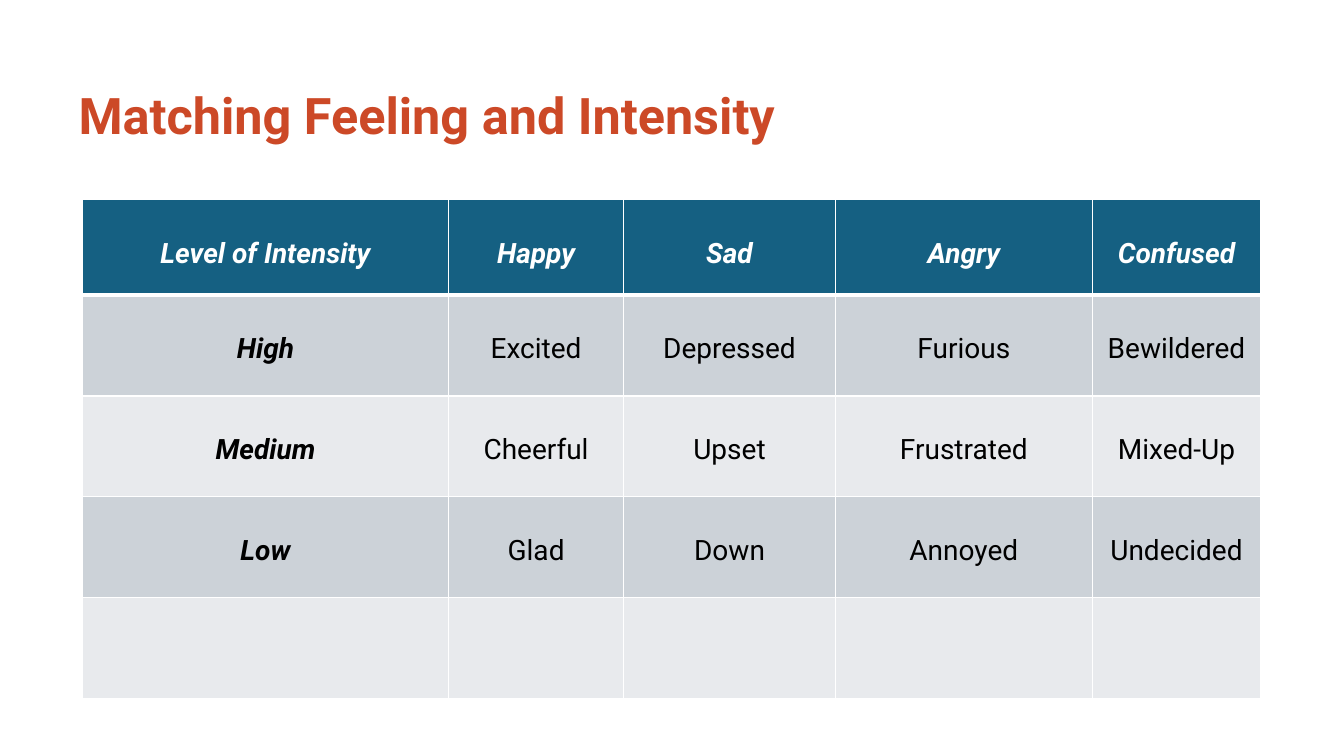
import lxml.etree
import pptx
import pptx.dml.color
import pptx.enum.text
import pptx.oxml.ns
import pptx.util

Cm = pptx.util.Cm
WHITE = "FFFFFF"
BLACK = "000000"
ORANGE = "CC4927"
TEAL = "156082"
BAND_FILLS = ["CCD2D8", "E8EAED"]

COLUMN_WIDTHS = [9.22, 4.42, 5.33, 6.48, 4.24]
ROW_HEIGHTS = [2.41, 2.54, 2.54, 2.54, 2.54]
FEELINGS = [
    ["Level of Intensity", "Happy", "Sad", "Angry", "Confused"],
    ["High", "Excited", "Depressed", "Furious", "Bewildered"],
    ["Medium", "Cheerful", "Upset", "Frustrated", "Mixed-Up"],
    ["Low", "Glad", "Down", "Annoyed", "Undecided"],
    [""] * 5,
]


def rgb(color):
    """Return the colour for a hex string."""
    return pptx.dml.color.RGBColor.from_string(color)


def style_paragraph(paragraph, size, color, bold=False, italic=False):
    """Format every run of a paragraph."""
    for run in paragraph.runs:
        run.font.name = "Roboto"
        run.font.size = pptx.util.Pt(size)
        run.font.bold = bold
        run.font.italic = italic
        run.font.color.rgb = rgb(color)


def add_title(slide, text):
    """Add the slide heading."""
    shape = slide.shapes.add_textbox(Cm(1.73), Cm(1.98), Cm(27.76), Cm(1.8))
    frame = shape.text_frame
    frame.word_wrap = True
    frame.vertical_anchor = pptx.enum.text.MSO_ANCHOR.MIDDLE
    frame.text = text
    style_paragraph(frame.paragraphs[0], 36, ORANGE, bold=True)


def set_borders(cell, widths):
    """Draw white cell borders with a width in points for each side."""
    qn = pptx.oxml.ns.qn
    properties = cell._tc.get_or_add_tcPr()
    for side, width in widths.items():
        line = lxml.etree.SubElement(
            properties, qn(f"a:ln{side}"), w=str(pptx.util.Pt(width)))
        fill = lxml.etree.SubElement(line, qn("a:solidFill"))
        lxml.etree.SubElement(fill, qn("a:srgbClr"), val=WHITE)


def fill_cell(cell, text, row, column):
    """Write and format one cell by its place in the table."""
    header = row == 0
    emphasis = header or column == 0
    set_borders(cell, {"L": 1, "R": 1, "T": 3 if row == 1 else 1,
                       "B": 3 if header else 1})
    cell.fill.solid()
    cell.fill.fore_color.rgb = rgb(TEAL if header else BAND_FILLS[(row - 1) % 2])
    cell.margin_top = Cm(0.95)
    cell.text_frame.text = text
    paragraph = cell.text_frame.paragraphs[0]
    paragraph.alignment = pptx.enum.text.PP_ALIGN.CENTER
    style_paragraph(paragraph, 20, WHITE if header else BLACK, emphasis, emphasis)


def add_feelings_table(slide):
    """Add the table of feelings by intensity."""
    table = slide.shapes.add_table(
        len(ROW_HEIGHTS), len(COLUMN_WIDTHS), Cm(2.08), Cm(5.03),
        Cm(sum(COLUMN_WIDTHS)), Cm(sum(ROW_HEIGHTS))).table
    for column, width in zip(table.columns, COLUMN_WIDTHS):
        column.width = Cm(width)
    for row, height in zip(table.rows, ROW_HEIGHTS):
        row.height = Cm(height)
    for row, words in enumerate(FEELINGS):
        for column, word in enumerate(words):
            fill_cell(table.cell(row, column), word, row, column)


def main():
    """Build and save the presentation."""
    presentation = pptx.Presentation()
    presentation.slide_width = Cm(33.87)
    presentation.slide_height = Cm(19.05)
    slide = presentation.slides.add_slide(presentation.slide_layouts[6])
    add_title(slide, "Matching Feeling and Intensity")
    add_feelings_table(slide)
    presentation.save("out.pptx")


if __name__ == "__main__":
    main()
